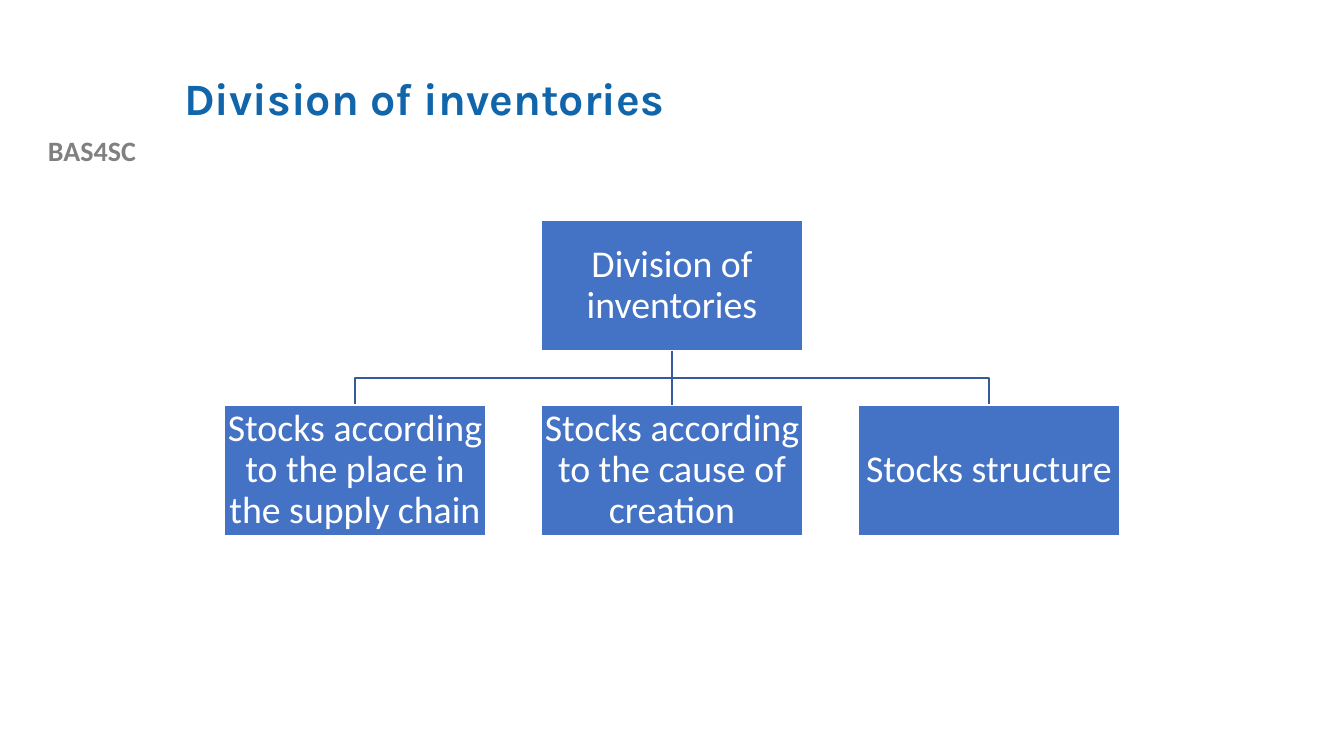
from lxml import etree
from pptx import Presentation
from pptx import util as u
from pptx.dml.color import RGBColor
from pptx.enum import shapes, text
from pptx.oxml.ns import qn

PX = 914400 / 100.8


def px(*vals):
    return [u.Emu(round(v * PX)) for v in vals]


def tint(code):
    return RGBColor.from_string(code)


class Deck:
    """Holds the style and the current slide, and draws its elements."""

    blue, edge, head, gray, white = "4472C4", "365B9D", "1065AB", "808080", "FFFFFF"
    body, face = "Calibri", "Karla"

    def __init__(self, wide, high):
        self.prs = Presentation()
        self.prs.slide_width, self.prs.slide_height = px(wide, high)
        self.slide = self.prs.slides.add_slide(self.prs.slide_layouts[5])
        self.items = self.slide.shapes

    def letter(self, shape, words, size, color, font, align, bold=False, space=1.0):
        frame = shape.text_frame
        frame.text = words
        frame.word_wrap = True
        para = frame.paragraphs[0]
        para.alignment = align
        para.line_spacing = space
        style = para.runs[0].font
        style.size, style.bold, style.name = u.Pt(size), bold, font
        style.color.rgb = tint(color)
        return frame

    def title(self, words, *area):
        shape = self.items.title
        shape.left, shape.top, shape.width, shape.height = px(*area)
        frame = self.letter(shape, words, 32, self.head, self.face,
                            text.PP_ALIGN.LEFT, True, 0.9)
        frame.vertical_anchor = text.MSO_ANCHOR.MIDDLE

    def label(self, words, *area):
        shape = self.items.add_textbox(*px(*area))
        self.letter(shape, words, 20, self.gray, self.body, text.PP_ALIGN.CENTER, True)

    def box(self, words, *area):
        shape = self.items.add_shape(shapes.MSO_SHAPE.RECTANGLE, *px(*area))
        shape.shadow.inherit = False
        shape.fill.solid()
        shape.fill.fore_color.rgb = tint(self.blue)
        self.stroke(shape, self.white)
        frame = self.letter(shape, words, 27, self.white, self.body,
                            text.PP_ALIGN.CENTER, space=0.9)
        frame.vertical_anchor = text.MSO_ANCHOR.MIDDLE
        inset, = px(2)
        frame.margin_left = frame.margin_right = inset
        frame.margin_top = frame.margin_bottom = inset
        return shape

    def stroke(self, shape, color):
        shape.line.color.rgb = tint(color)
        shape.line.width = u.Pt(1)

    def elbow(self, start, *points):
        route = self.items.build_freeform(*start, scale=PX)
        route.add_line_segments(points, close=False)
        shape = route.convert_to_shape()
        shape.shadow.inherit = False
        shape.fill.background()
        self.stroke(shape, self.edge)

    def link(self, upper, lower):
        line = self.items.add_connector(shapes.MSO_CONNECTOR.STRAIGHT, 0, 0, 0, 0)
        line.begin_connect(upper, 2)
        line.end_connect(lower, 0)
        self.stroke(line, self.edge)
        etree.SubElement(line._element.spPr, qn("a:effectLst"))


def main():
    deck = Deck(1344, 756)
    deck.label("BAS4SC", 0, 129, 184, 44)
    deck.title("Division of inventories", 174, 40, 1075, 123)

    wide, high, step = 262, 131, 317
    left, top, low = 224, 220, 405
    mid = left + step + wide // 2
    base = top + high
    bend = (base + low) // 2

    for end in (mid + step, mid - step):
        deck.elbow((mid, base), (mid, bend), (end, bend), (end, low))

    root = deck.box("Division of inventories", left + step, top, wide, high)
    names = ("Stocks according to the place in the supply chain",
             "Stocks according to the cause of creation",
             "Stocks structure")
    kids = [deck.box(name, left + i * step, low, wide, high)
            for i, name in enumerate(names)]
    deck.link(root, kids[1])
    deck.prs.save("out.pptx")


if __name__ == "__main__":
    main()
